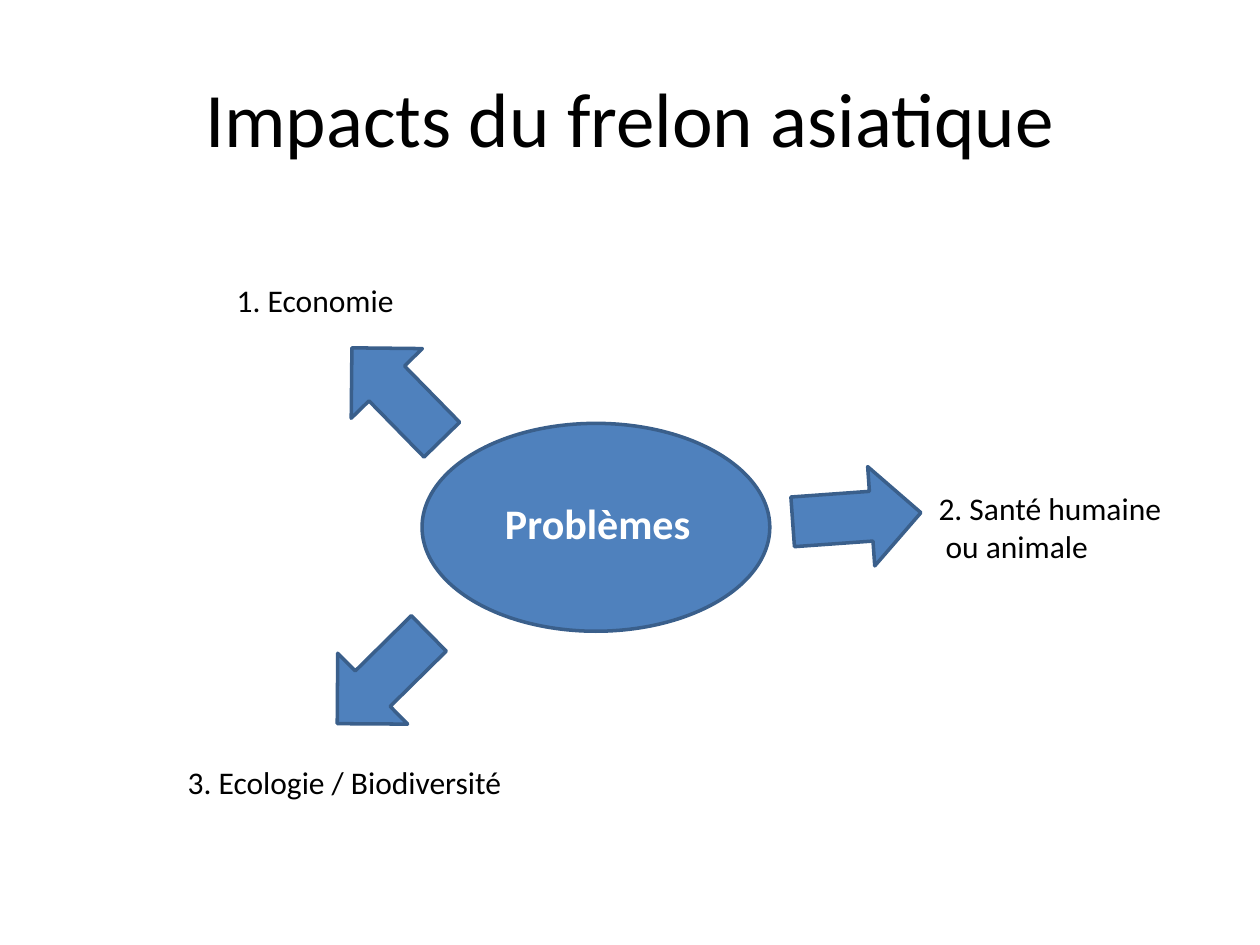
from dataclasses import dataclass

from pptx import Presentation
from pptx import util as u
from pptx.dml import color
from pptx.enum import shapes, text


@dataclass(frozen=True)
class Theme:
    font: str = "Calibri"
    ink: str = "000000"
    light: str = "FFFFFF"
    fill: str = "4F81BD"
    edge: str = "3A5F8B"
    line: float = 2
    head: int = 44
    hub: int = 24
    body: int = 18


THEME = Theme()
ARROW = (1.02, 0.79)

# Each impact: lines of text, label box, arrow corner, arrow angle
IMPACTS = [
    (["1. Economie"], (1.78, 2.18, 1.48, 0.4), (2.64, 2.73), 225.6),
    (["2. Santé humaine", " ou animale"], (7.35, 3.83, 1.99, 0.7), (6.29, 3.71), 355.9),
    (["3. Ecologie / Biodiversité"], (1.39, 6.01, 2.71, 0.4), (2.53, 4.99), 135.4),
]


def inches(box):
    return [u.Inches(v) for v in box]


def set_all(item, values):
    for name, value in values.items():
        setattr(item, name, value)


def write(frame, lines, size, ink, align, bold=False):
    for i, line in enumerate(lines):
        para = frame.paragraphs[0] if i == 0 else frame.add_paragraph()
        para.alignment = align
        run = para.add_run()
        run.text = line
        set_all(run.font, {"name": THEME.font, "size": u.Pt(size), "bold": bold})
        run.font.color.rgb = color.RGBColor.from_string(ink)


def add_title(slide, box, words):
    title = slide.shapes.title
    set_all(title, dict(zip(("left", "top", "width", "height"), inches(box))))
    frame = title.text_frame
    set_all(frame, {
        "margin_left": 0, "margin_top": 0, "margin_right": 0, "margin_bottom": 0,
        "vertical_anchor": text.MSO_ANCHOR.MIDDLE, "word_wrap": True,
    })
    write(frame, [words], THEME.head, THEME.ink, text.PP_ALIGN.CENTER)


def add_solid(slide, kind, box, angle=0):
    solid = slide.shapes.add_shape(kind, *inches(box))
    solid.rotation = angle
    solid.shadow.inherit = False
    solid.fill.solid()
    solid.fill.fore_color.rgb = color.RGBColor.from_string(THEME.fill)
    solid.line.color.rgb = color.RGBColor.from_string(THEME.edge)
    solid.line.width = u.Pt(THEME.line)


def add_label(slide, box, lines, size=THEME.body, ink=THEME.ink, bold=False):
    frame = slide.shapes.add_textbox(*inches(box)).text_frame
    set_all(frame, {"word_wrap": False, "auto_size": text.MSO_AUTO_SIZE.SHAPE_TO_FIT_TEXT})
    write(frame, lines, size, ink, text.PP_ALIGN.LEFT, bold)


def add_hub(slide, box, label, words):
    add_solid(slide, shapes.MSO_SHAPE.OVAL, box)
    add_label(slide, label, [words], THEME.hub, THEME.light, True)


def add_impact(slide, lines, box, corner, angle):
    add_label(slide, box, lines)
    add_solid(slide, shapes.MSO_SHAPE.RIGHT_ARROW, corner + ARROW, angle)


def main():
    deck = Presentation()
    set_all(deck, {"slide_width": u.Inches(10), "slide_height": u.Inches(7.5)})
    slide = deck.slides.add_slide(deck.slide_layouts[5])

    # Title
    add_title(slide, (0.5, 0.3, 9, 1.25), "Impacts du frelon asiatique")

    # Central problem
    add_hub(slide, (3.35, 3.36, 2.76, 1.65), (3.91, 3.9, 1.67, 0.5), "Problèmes")

    # Impacts around it
    for impact in IMPACTS:
        add_impact(slide, *impact)

    deck.save("out.pptx")


if __name__ == "__main__":
    main()
